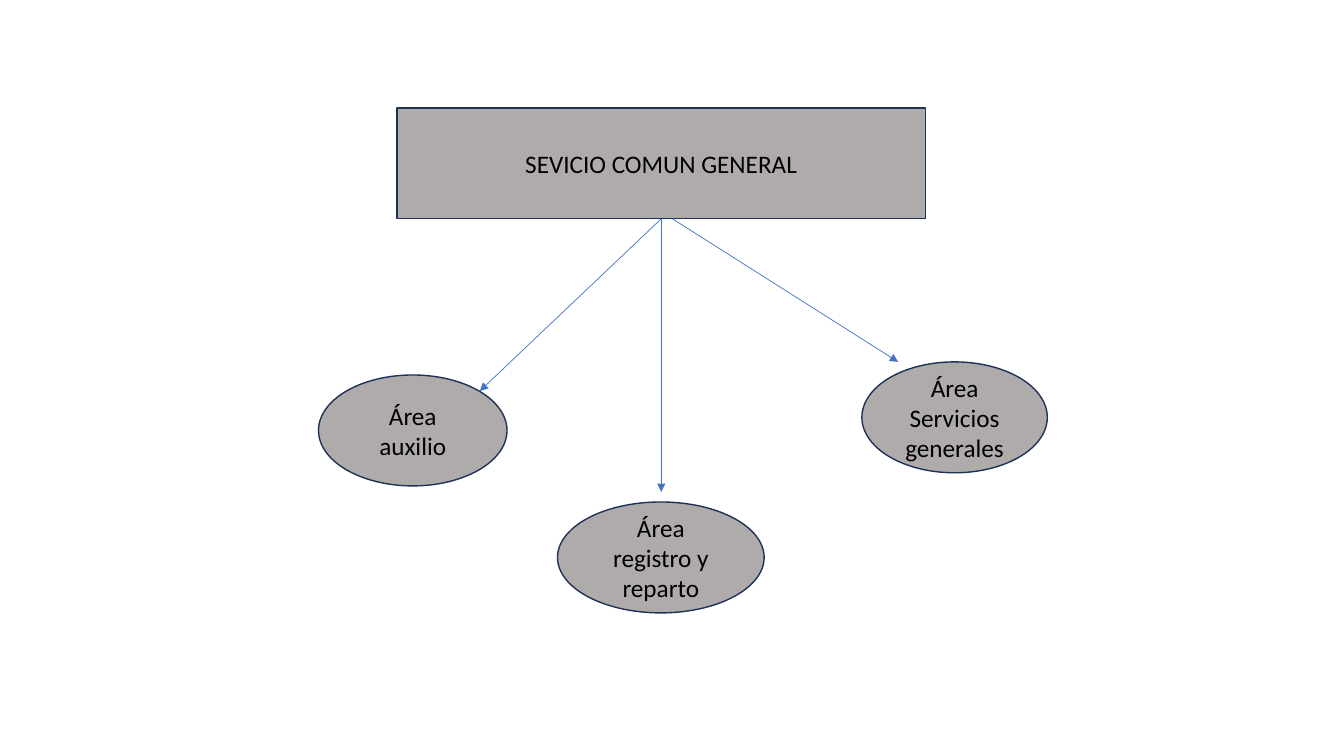
from lxml import etree
from pptx import Presentation, util as u
from pptx.dml.color import RGBColor
from pptx.enum import shapes, text
from pptx.oxml import ns

WIDTH, HEIGHT = u.Inches(13.33), u.Inches(7.5)
GREY = RGBColor(0xAF, 0xAB, 0xAB)
NAVY = RGBColor(0x1E, 0x32, 0x56)
BLUE = RGBColor(0x44, 0x72, 0xC4)
BLACK = RGBColor(0, 0, 0)

BOX_HEIGHT = 14.67
SERVICE = ("SEVICIO COMUN GENERAL", 29.55, 14.27, 39.3)
AREAS = [
    ("Área registro y reparto", 41.48, 66.4, 15.38),
    ("Área Servicios generales", 64.13, 47.87, 13.8),
    ("Área auxilio", 23.7, 49.6, 14.03),
]
SERVICE_BOTTOM = SERVICE[2] + BOX_HEIGHT
SERVICE_MIDDLE = SERVICE[1] + SERVICE[3] / 2
ARROWS = [
    (SERVICE_MIDDLE, 35.7, 51.73),
    (SERVICE_MIDDLE, SERVICE_MIDDLE, 65.07),
    (50.03, 66.83, 47.87),
]


def across(percent):
    return round(WIDTH * percent / 100)


def down(percent):
    return round(HEIGHT * percent / 100)


def add_box(page, kind, label, left, top, width):
    box = page.shapes.add_shape(
        kind, across(left), down(top), across(width), down(BOX_HEIGHT))
    box.shadow.inherit = False
    box.fill.solid()
    box.fill.fore_color.rgb = GREY
    box.line.color.rgb = NAVY
    box.line.width = u.Pt(1)
    frame = box.text_frame
    frame.word_wrap = True
    frame.vertical_anchor = text.MSO_ANCHOR.MIDDLE
    para = frame.paragraphs[0]
    para.text = label
    para.alignment = text.PP_ALIGN.CENTER
    para.font.name = "Calibri"
    para.font.size = u.Pt(18)
    para.font.color.rgb = BLACK


def add_arrow(page, start, end, bottom):
    arrow = page.shapes.add_connector(
        shapes.MSO_CONNECTOR.STRAIGHT,
        across(start), down(SERVICE_BOTTOM), across(end), down(bottom))
    arrow.line.color.rgb = BLUE
    arrow.line.width = u.Pt(0.5)
    etree.SubElement(arrow.line._get_or_add_ln(), ns.qn("a:tailEnd"), type="triangle")
    etree.SubElement(arrow._element.spPr, ns.qn("a:effectLst"))


def main():
    deck = Presentation()
    deck.slide_width, deck.slide_height = WIDTH, HEIGHT
    page = deck.slides.add_slide(deck.slide_layouts[6])
    add_box(page, shapes.MSO_SHAPE.RECTANGLE, *SERVICE)
    for area in AREAS:
        add_box(page, shapes.MSO_SHAPE.OVAL, *area)
    for arrow in ARROWS:
        add_arrow(page, *arrow)
    deck.save("out.pptx")


if __name__ == "__main__":
    main()
